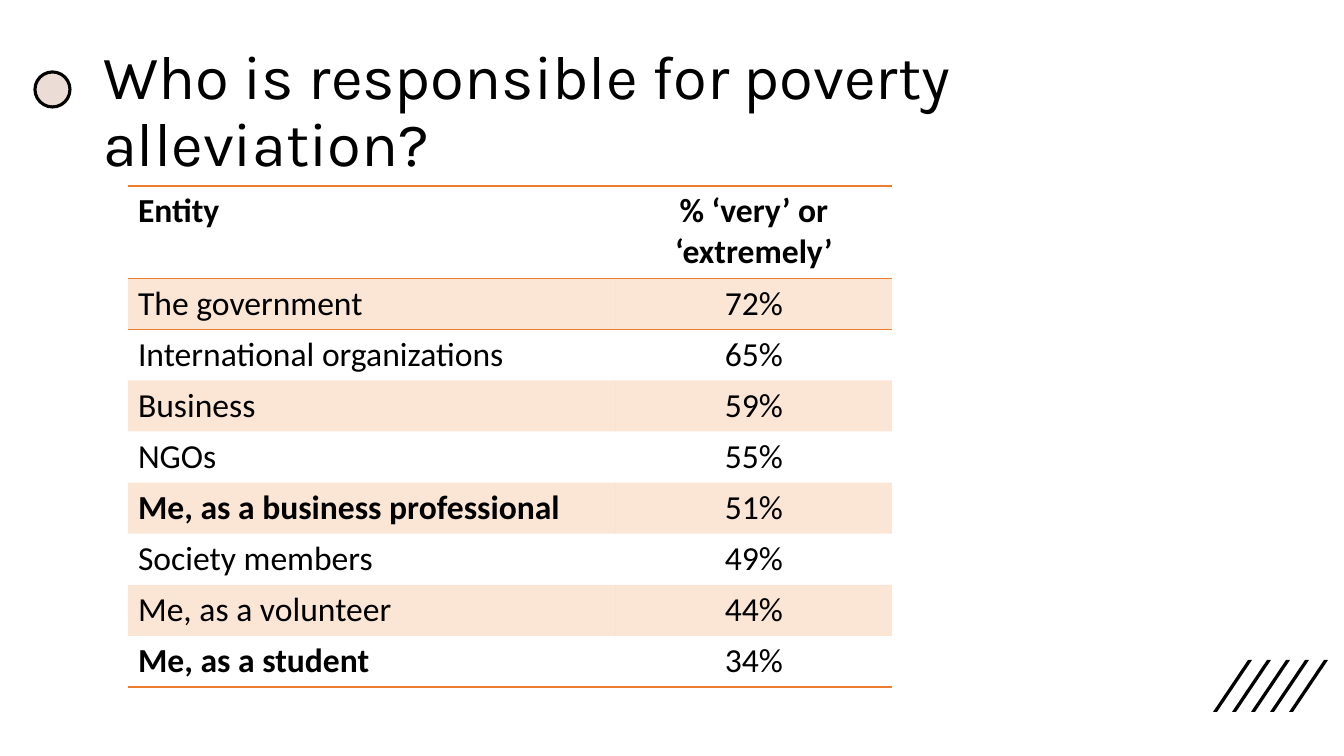
import pptx
import pptx.dml.color
import pptx.enum.shapes
import pptx.enum.text
import pptx.oxml
import pptx.oxml.ns
import pptx.util

PX = 914400 / 100.8
BLACK = pptx.dml.color.RGBColor(0x00, 0x00, 0x00)
ORANGE = pptx.dml.color.RGBColor(0xED, 0x7D, 0x31)
BLUSH = pptx.dml.color.RGBColor(0xEB, 0xDC, 0xD5)
LEFT = pptx.enum.text.PP_ALIGN.LEFT
CENTER = pptx.enum.text.PP_ALIGN.CENTER
NO_STYLE = "{2D5ABB26-0587-4C30-8999-92F81FD0307C}"


def px(*lengths):
    return [pptx.util.Emu(round(length * PX)) for length in lengths]


def write(text_frame, text, font="Calibri", size=24, bold=False, align=LEFT, spacing=1.0):
    paragraph = text_frame.paragraphs[0]
    paragraph.alignment = align
    paragraph.line_spacing = spacing
    run = paragraph.add_run()
    run.text = text
    run.font.name = font
    run.font.size = pptx.util.Pt(size)
    run.font.bold = bold
    run.font.color.rgb = BLACK


presentation = pptx.Presentation()
presentation.slide_width, presentation.slide_height = px(1344, 756)
slide = presentation.slides.add_slide(presentation.slide_layouts[5])

for index in range(5):
    left = 1213 + 19 * index
    builder = slide.shapes.build_freeform(left + 4, 712, scale=PX)
    builder.add_line_segments([(left, 712), (left + 35, 660), (left + 39, 660)], close=True)
    stripe = builder.convert_to_shape()
    stripe.shadow.inherit = False
    stripe.fill.solid()
    stripe.fill.fore_color.rgb = BLACK
    stripe.line.fill.background()

circle = slide.shapes.add_shape(pptx.enum.shapes.MSO_SHAPE.OVAL, *px(35, 72, 35, 35))
circle.shadow.inherit = False
circle.fill.solid()
circle.fill.fore_color.rgb = BLUSH
circle.line.color.rgb = BLACK
circle.line.width = pptx.util.Pt(2.25)

title = slide.shapes.title
title.left, title.top, title.width, title.height = px(93, 40, 1159, 146)
title.text_frame.word_wrap = True
title.text_frame.auto_size = pptx.enum.text.MSO_AUTO_SIZE.NONE
title.text_frame.vertical_anchor = pptx.enum.text.MSO_ANCHOR.MIDDLE
write(title.text_frame, "Who is responsible for poverty alleviation?",
      font="Karla", size=44, spacing=0.9)

entities = [
    ("Entity", "% ‘very’ or ‘extremely’"),
    ("The government", "72%"),
    ("International organizations", "65%"),
    ("Business", "59%"),
    ("NGOs", "55%"),
    ("Me, as a business professional", "51%"),
    ("Society members", "49%"),
    ("Me, as a volunteer", "44%"),
    ("Me, as a student", "34%"),
]
bold_entities = ("Entity", "Me, as a business professional", "Me, as a student")
last_row = len(entities) - 1
borders = {0: ("lnT", "lnB"), 1: ("lnT",), last_row: ("lnB",)}

frame = slide.shapes.add_table(len(entities), 2, *px(128, 186, 764, 500))
table = frame.table
table.horz_banding = False
table.first_row = False
frame._element.xpath(".//a:tableStyleId")[0].text = NO_STYLE
table.columns[0].width, table.columns[1].width = px(488, 276)

for row, values in enumerate(entities):
    table.rows[row].height = px(92 if row == 0 else 51)[0]
    for column, text in enumerate(values):
        cell = table.cell(row, column)
        bold = row == 0 or (column == 0 and text in bold_entities)
        write(cell.text_frame, text, bold=bold, align=CENTER if column else LEFT)
        properties = cell._tc.get_or_add_tcPr()
        for edge in borders.get(row, ()):
            properties.append(pptx.oxml.parse_xml(
                f'<a:{edge} {pptx.oxml.ns.nsdecls("a")} w="12700"><a:solidFill>'
                f'<a:srgbClr val="{ORANGE}"/></a:solidFill></a:{edge}>'))
        if row % 2:
            cell.fill.solid()
            cell.fill.fore_color.rgb = ORANGE
            color = properties.xpath("./a:solidFill/a:srgbClr")[0]
            color.append(pptx.oxml.parse_xml(
                f'<a:alpha {pptx.oxml.ns.nsdecls("a")} val="20000"/>'))
        else:
            cell.fill.background()

presentation.save("out.pptx")
